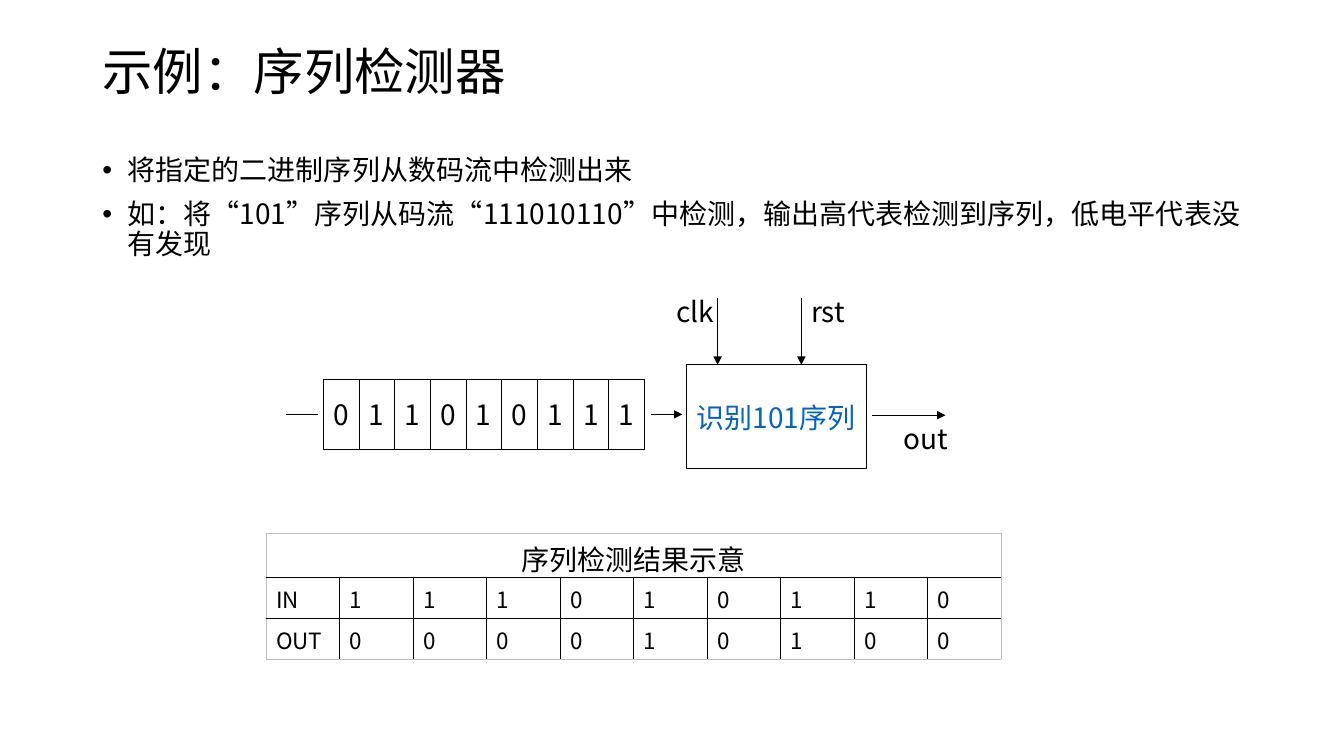
"""Build the sequence detector slide with its block diagram and result table."""
import pptx
import pptx.dml.color
import pptx.enum.shapes
import pptx.enum.text
import pptx.oxml.ns
import pptx.util
from lxml import etree

Pt = pptx.util.Pt
Align = pptx.enum.text.PP_ALIGN
Anchor = pptx.enum.text.MSO_ANCHOR
qn = pptx.oxml.ns.qn

FONT = "Noto Sans CJK SC"
COLORS = {"text": "000000", "line": "000000", "fill": "FFFFFF",
          "accent": "0563C1", "frame": "BFBFBF"}

TITLE = "示例：序列检测器"
BULLETS = ["将指定的二进制序列从数码流中检测出来",
           "如：将“101”序列从码流“111010110”中检测，输出高代表检测到序列，低电平代表没有发现"]
STREAM = "011010111"
DETECTOR = "识别101序列"
LABELS = [("clk", 476, 206.8, 45), ("rst", 572.4, 206.8, 45.4),
          ("out", 638, 297.5, 61.2)]
WIRES = [(204.5, 296, 226.8, 296, False), (465.1, 296, 487.4, 296, True),
         (622.8, 296.6, 675.4, 296.6, True),
         (512.6, 213.1, 512.6, 260.6, True), (572.4, 213.1, 572.4, 260.6, True)]
TABLE_TITLE = "序列检测结果示意"
TABLE_ROWS = [("IN", "111010110"), ("OUT", "000010100")]

STREAM_BOX = (231, 271, 229.3, 50.2)
DETECTOR_BOX = (490.3, 260.6, 128.9, 74.4)
TABLE_BOX = (190, 380.9, 525, 90)
ROW_HEIGHTS = (31.4, 29.3, 29.3)


def color(name):
    return pptx.dml.color.RGBColor.from_string(COLORS[name])


def write_text(frame, text, size=20, tint="text", align=Align.LEFT, spacing=None,
               before=0, bullet=False, new=False):
    paragraph = frame.add_paragraph() if new else frame.paragraphs[0]
    paragraph.alignment = align
    paragraph.space_before = Pt(before)
    if spacing:
        paragraph.line_spacing = spacing
    if bullet:
        properties = paragraph._p.get_or_add_pPr()
        properties.set("marL", str(Pt(18)))
        properties.set("indent", str(-Pt(18)))
        etree.SubElement(properties, qn("a:buFont")).set("typeface", "Arial")
        etree.SubElement(properties, qn("a:buChar")).set("char", "•")
    run = paragraph.add_run()
    run.text = text
    run.font.name = FONT
    run.font.size = Pt(size)
    run.font.bold = False
    run.font.color.rgb = color(tint)
    east_asian = etree.Element(qn("a:ea"), typeface=FONT)
    run.font._element.find(qn("a:latin")).addnext(east_asian)


def place(shape, left, top, width, height):
    shape.left, shape.top = Pt(left), Pt(top)
    shape.width, shape.height = Pt(width), Pt(height)


def add_box(slide, text, box, tint="text"):
    shape = slide.shapes.add_shape(pptx.enum.shapes.MSO_SHAPE.RECTANGLE,
                                   *map(Pt, box))
    shape.shadow.inherit = False
    shape.fill.solid()
    shape.fill.fore_color.rgb = color("fill")
    shape.line.color.rgb = color("line")
    shape.line.width = Pt(0.75)
    shape.text_frame.word_wrap = False
    shape.text_frame.vertical_anchor = Anchor.MIDDLE
    write_text(shape.text_frame, text, tint=tint)


def add_wire(slide, start_x, start_y, end_x, end_y, arrow):
    wire = slide.shapes.add_connector(
        pptx.enum.shapes.MSO_CONNECTOR.STRAIGHT,
        Pt(start_x), Pt(start_y), Pt(end_x), Pt(end_y))
    wire.line.color.rgb = color("line")
    wire.line.width = Pt(0.75)
    if arrow:
        etree.SubElement(wire.line._get_or_add_ln(), qn("a:tailEnd")).set(
            "type", "triangle")
    etree.SubElement(wire._element.spPr, qn("a:effectLst"))


def set_borders(cell, outer_sides):
    properties = cell._tc.get_or_add_tcPr()
    for side in "LRTB":
        outer = side in outer_sides
        line = etree.SubElement(properties, qn("a:ln" + side),
                                w=str(Pt(0.5 if outer else 0.75)))
        fill = etree.SubElement(line, qn("a:solidFill"))
        etree.SubElement(fill, qn("a:srgbClr")).set(
            "val", COLORS["frame" if outer else "line"])


def add_result_table(slide):
    rows = [[TABLE_TITLE] + [""] * len(STREAM)]
    rows += [[name, *bits] for name, bits in TABLE_ROWS]
    columns = len(rows[0])
    table = slide.shapes.add_table(len(rows), columns, *map(Pt, TABLE_BOX)).table
    table.first_row = table.horz_banding = False
    for column in table.columns:
        column.width = Pt(TABLE_BOX[2] / columns)
    table.cell(0, 0).merge(table.cell(0, columns - 1))
    for row_index, values in enumerate(rows):
        table.rows[row_index].height = Pt(ROW_HEIGHTS[row_index])
        header = row_index == 0
        for column_index, value in enumerate(values):
            cell = table.cell(row_index, column_index)
            outer = "TLR" if header else ""
            outer += "B" if row_index == len(rows) - 1 else ""
            outer += "L" if column_index == 0 else ""
            outer += "R" if column_index == columns - 1 else ""
            set_borders(cell, outer)
            cell.fill.background()
            cell.margin_top = Pt(3.6)
            cell.margin_bottom = Pt(0 if header else 2.4)
            if value:
                write_text(cell.text_frame, value, size=20 if header else 16,
                           align=Align.CENTER if header else Align.LEFT)


def main():
    presentation = pptx.Presentation()
    presentation.slide_width, presentation.slide_height = Pt(960), Pt(540)
    slide = presentation.slides.add_slide(presentation.slide_layouts[1])

    title = slide.shapes.title
    place(title, 66, 18.7, 828, 58.3)
    title.text_frame.auto_size = pptx.enum.text.MSO_AUTO_SIZE.NONE
    title.text_frame.vertical_anchor = Anchor.MIDDLE
    write_text(title.text_frame, TITLE, size=36, spacing=1.1)

    body = slide.placeholders[1]
    place(body, 66, 108, 828, 68.4)
    body.text_frame.auto_size = pptx.enum.text.MSO_AUTO_SIZE.NONE
    for index, text in enumerate(BULLETS):
        write_text(body.text_frame, text, spacing=0.9, bullet=True,
                   before=10 if index else 0, new=index > 0)

    left, top, width, height = STREAM_BOX
    cell_width = width / len(STREAM)
    for index, bit in enumerate(STREAM):
        add_box(slide, bit, (left + index * cell_width, top, cell_width, height))
    add_box(slide, DETECTOR, DETECTOR_BOX, tint="accent")
    for wire in WIRES:
        add_wire(slide, *wire)
    for text, left, top, width in LABELS:
        label = slide.shapes.add_textbox(Pt(left), Pt(top), Pt(width), Pt(31.7))
        label.text_frame.word_wrap = True
        write_text(label.text_frame, text)

    add_result_table(slide)
    presentation.save("out.pptx")


if __name__ == "__main__":
    main()
